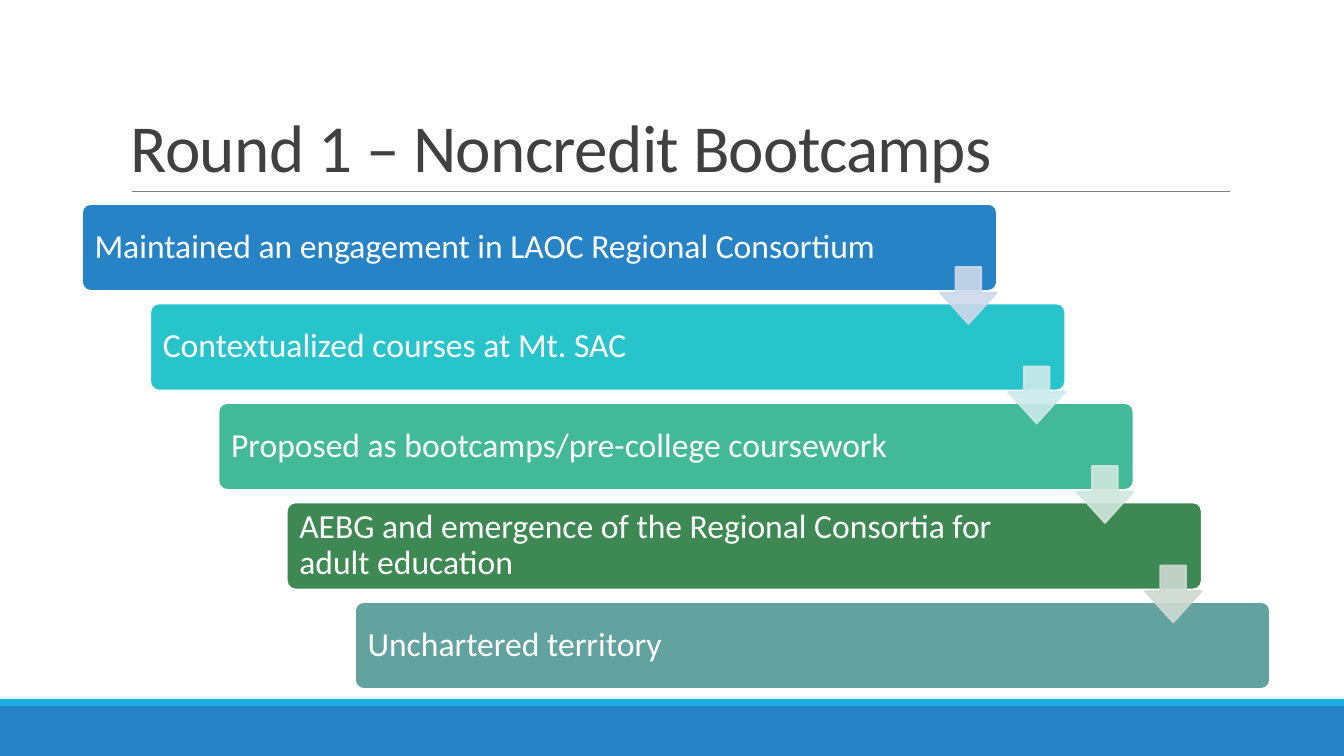
import pptx
import pptx.util
import pptx.dml.color
import pptx.enum.shapes
import pptx.enum.text
from lxml import etree

WIDE, HIGH = 1344, 756
SCALE = 12192000 / WIDE
NS = "http://schemas.openxmlformats.org/drawingml/2006/main"
SHAPE = pptx.enum.shapes.MSO_SHAPE
ANCHOR = pptx.enum.text.MSO_ANCHOR

# wording, bar colour, arrow colour, space kept free at the right
STEPS = [
    ("Maintained an engagement in LAOC Regional Consortium", "2683C6", "CDD9EA", 110),
    ("Contextualized courses at Mt. SAC", "28C4CC", "CDEAEC", 135),
    ("Proposed as bootcamps/pre-college coursework", "42BA97", "CFE7DD", 135),
    ("AEBG and emergence of the Regional Consortia for adult education",
     "3E8853", "CEDAD1", 135),
    ("Unchartered territory", "62A39F", None, 135),
]


def px(n):
    return pptx.util.Emu(round(n * SCALE))


def rgb(code):
    return pptx.dml.color.RGBColor.from_string(code)


def fade(fmt, alpha):
    """Give a solid fill or line an opacity in percent."""
    color = next(fmt.iter("{%s}srgbClr" % NS))
    etree.SubElement(color, "{%s}alpha" % NS, val=str(alpha * 1000))


def block(slide, kind, box, fill, line=None, adjust=()):
    shape = slide.shapes.add_shape(kind, *map(px, box))
    shape.shadow.inherit = False
    shape.fill.solid()
    shape.fill.fore_color.rgb = rgb(fill)
    if line:
        shape.line.color.rgb = rgb(line)
        shape.line.width = pptx.util.Pt(1.25)
    else:
        shape.line.fill.background()
    for i, value in enumerate(adjust):
        shape.adjustments[i] = value
    return shape


def write(shape, text, size, color, space, frame):
    body = shape.text_frame
    for name, value in frame.items():
        setattr(body, name, value)
    para = body.paragraphs[0]
    para.alignment = pptx.enum.text.PP_ALIGN.LEFT
    para.line_spacing = space
    run = para.add_run()
    run.text = text
    font = {"name": "Calibri", "size": pptx.util.Pt(size)}
    for name, value in font.items():
        setattr(run.font, name, value)
    run.font.color.rgb = rgb(color)
    return run


def footer(slide, x, y, w, h):
    edge = 7
    block(slide, SHAPE.RECTANGLE, (x, y + edge, w, h - edge), "2683C6")
    block(slide, SHAPE.RECTANGLE, (x, y, w, edge), "1CADE4")


def header(slide, x, y, w, h):
    rule = slide.shapes.add_connector(
        pptx.enum.shapes.MSO_CONNECTOR.STRAIGHT,
        *map(px, (x + 11, y + h, x + w, y + h)))
    rule.line.color.rgb = rgb("808080")
    rule.line.width = pptx.util.Pt(0.5)
    etree.SubElement(rule._element.spPr, "{%s}effectLst" % NS)
    title = slide.shapes.add_textbox(*map(px, (x, y, w, h)))
    run = write(title, "Round 1 – Noncredit Bootcamps", 48, "404040", 0.85,
                {"word_wrap": True, "vertical_anchor": ANCHOR.BOTTOM})
    run.font._element.set("spc", "-50")


def stairs(slide, x, y, w, h):
    """Bars stepping down to the right, then the arrows that link them."""
    wide, high, size = 915, 87, 57
    last = len(STEPS) - 1
    spots = [(x + i * (w - wide) / last, y + i * (h - high) / last)
             for i in range(len(STEPS))]
    for (left, top), (text, fill, _, free) in zip(spots, STEPS):
        bar = block(slide, SHAPE.ROUNDED_RECTANGLE, (left, top, wide, high),
                    fill, "FFFFFF", [0.1])
        write(bar, text, 24, "FFFFFF", 0.9, {
            "word_wrap": True, "vertical_anchor": ANCHOR.MIDDLE,
            "margin_left": px(10), "margin_right": px(free),
            "margin_top": px(8), "margin_bottom": px(8)})
    for (left, top), (_, _, tint, _) in zip(spots[:-1], STEPS):
        box = (left + wide - size, top + 63, size, size)
        arrow = block(slide, SHAPE.DOWN_ARROW, box, tint, tint, [0.45, 0.55])
        for part in ("solidFill", "ln"):
            fade(arrow._element.spPr.find("{%s}%s" % (NS, part)), 90)


def main():
    deck = pptx.Presentation()
    deck.slide_width, deck.slide_height = px(WIDE), px(HIGH)
    slide = deck.slides.add_slide(deck.slide_layouts[6])
    footer(slide, 0, 699, WIDE, HIGH - 699)
    header(slide, 121, 31, 1109, 160)
    stairs(slide, 82, 204, 1188, 485)
    deck.save("out.pptx")


if __name__ == "__main__":
    main()
